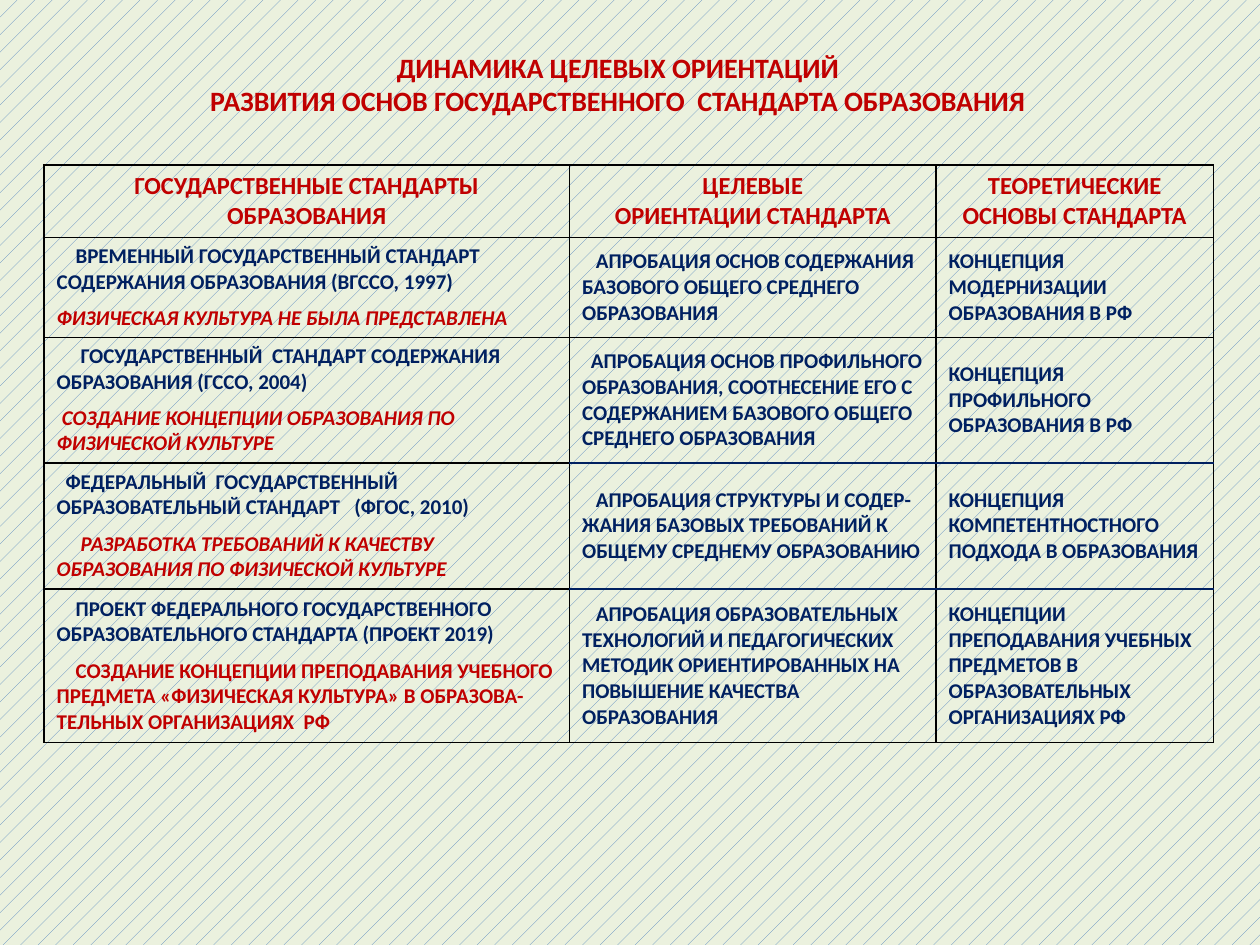
from dataclasses import dataclass
from typing import NamedTuple

from lxml.etree import SubElement
from pptx import Presentation
from pptx.dml.color import RGBColor
from pptx.enum.dml import MSO_PATTERN
from pptx.enum.text import MSO_ANCHOR as Anchor, MSO_AUTO_SIZE as AutoSize, PP_ALIGN as Align
from pptx.oxml.ns import qn
from pptx.util import Inches, Pt


@dataclass(frozen=True)
class Theme:
    font: str = "Calibri"
    red: str = "C00000"
    navy: str = "002060"
    black: str = "000000"
    pattern: str = "4F81BD"
    paper: str = "EBF1DE"
    title_size: int = 16
    header_size: int = 14
    body_size: int = 12
    space_after: int = 6
    border: int = 1


class Line(NamedTuple):
    text: str
    indent: float = 0
    accent: bool = False
    italic: bool = False


class StandardRow(NamedTuple):
    height: float
    standard: Line
    result: Line
    orientation: Line
    basis: Line
    bottom_color: str


THEME = Theme()
COLUMN_WIDTHS = (4.17, 2.91, 2.2)
HEADER_HEIGHT = 0.57
TITLE = (
    "ДИНАМИКА ЦЕЛЕВЫХ ОРИЕНТАЦИЙ \n"
    "РАЗВИТИЯ ОСНОВ ГОСУДАРСТВЕННОГО  СТАНДАРТА ОБРАЗОВАНИЯ "
)
HEADERS = (
    ("ГОСУДАРСТВЕННЫЕ СТАНДАРТЫ ОБРАЗОВАНИЯ",),
    ("ЦЕЛЕВЫЕ", "ОРИЕНТАЦИИ СТАНДАРТА"),
    ("ТЕОРЕТИЧЕСКИЕ ОСНОВЫ СТАНДАРТА",),
)
ROWS = (
    StandardRow(
        0.79,
        Line("ВРЕМЕННЫЙ ГОСУДАРСТВЕННЫЙ СТАНДАРТ СОДЕРЖАНИЯ ОБРАЗОВАНИЯ (ВГССО, 1997)", 0.15),
        Line("ФИЗИЧЕСКАЯ КУЛЬТУРА НЕ БЫЛА ПРЕДСТАВЛЕНА", 0, True, True),
        Line("АПРОБАЦИЯ ОСНОВ СОДЕРЖАНИЯ БАЗОВОГО ОБЩЕГО СРЕДНЕГО ОБРАЗОВАНИЯ", 0.11),
        Line("КОНЦЕПЦИЯ МОДЕРНИЗАЦИИ ОБРАЗОВАНИЯ В РФ"),
        THEME.black,
    ),
    StandardRow(
        0.99,
        Line("ГОСУДАРСТВЕННЫЙ  СТАНДАРТ СОДЕРЖАНИЯ ОБРАЗОВАНИЯ (ГССО, 2004)", 0.19),
        Line("СОЗДАНИЕ КОНЦЕПЦИИ ОБРАЗОВАНИЯ ПО ФИЗИЧЕСКОЙ КУЛЬТУРЕ", 0.04, True, True),
        Line("АПРОБАЦИЯ ОСНОВ ПРОФИЛЬНОГО ОБРАЗОВАНИЯ, СООТНЕСЕНИЕ ЕГО С "
             "СОДЕРЖАНИЕМ БАЗОВОГО ОБЩЕГО СРЕДНЕГО ОБРАЗОВАНИЯ", 0.07),
        Line("КОНЦЕПЦИЯ ПРОФИЛЬНОГО ОБРАЗОВАНИЯ В РФ"),
        THEME.navy,
    ),
    StandardRow(
        1,
        Line("ФЕДЕРАЛЬНЫЙ  ГОСУДАРСТВЕННЫЙ ОБРАЗОВАТЕЛЬНЫЙ СТАНДАРТ   (ФГОС, 2010)", 0.07),
        Line("РАЗРАБОТКА ТРЕБОВАНИЙ К КАЧЕСТВУ ОБРАЗОВАНИЯ ПО ФИЗИЧЕСКОЙ КУЛЬТУРЕ",
             0.19, True, True),
        Line("АПРОБАЦИЯ СТРУКТУРЫ И СОДЕР-ЖАНИЯ БАЗОВЫХ ТРЕБОВАНИЙ К ОБЩЕМУ "
             "СРЕДНЕМУ ОБРАЗОВАНИЮ", 0.11),
        Line("КОНЦЕПЦИЯ КОМПЕТЕНТНОСТНОГО ПОДХОДА В ОБРАЗОВАНИЯ"),
        THEME.navy,
    ),
    StandardRow(
        1.22,
        Line("ПРОЕКТ ФЕДЕРАЛЬНОГО ГОСУДАРСТВЕННОГО ОБРАЗОВАТЕЛЬНОГО СТАНДАРТА "
             "(ПРОЕКТ 2019)", 0.15),
        Line("СОЗДАНИЕ КОНЦЕПЦИИ ПРЕПОДАВАНИЯ УЧЕБНОГО ПРЕДМЕТА «ФИЗИЧЕСКАЯ КУЛЬТУРА» "
             "В ОБРАЗОВА-ТЕЛЬНЫХ ОРГАНИЗАЦИЯХ  РФ", 0.15, True),
        Line("АПРОБАЦИЯ ОБРАЗОВАТЕЛЬНЫХ ТЕХНОЛОГИЙ И ПЕДАГОГИЧЕСКИХ МЕТОДИК "
             "ОРИЕНТИРОВАННЫХ НА ПОВЫШЕНИЕ КАЧЕСТВА ОБРАЗОВАНИЯ", 0.11),
        Line("КОНЦЕПЦИИ ПРЕПОДАВАНИЯ УЧЕБНЫХ ПРЕДМЕТОВ В ОБРАЗОВАТЕЛЬНЫХ ОРГАНИЗАЦИЯХ РФ"),
        THEME.black,
    ),
)


def write_text(paragraph, text: str, *, size: int, color: str, align=Align.LEFT,
               italic: bool = False, indent: float = 0, space_after: int = 0) -> None:
    paragraph.alignment = align
    paragraph.space_after = Pt(space_after)
    if indent:
        paragraph._p.get_or_add_pPr().set("indent", str(Inches(indent)))
    for index, part in enumerate(text.split("\n")):
        if index:
            paragraph.add_line_break()
        run = paragraph.add_run()
        run.text = part
        run.font.name = THEME.font
        run.font.size = Pt(size)
        run.font.bold = True
        run.font.italic = italic
        run.font.color.rgb = RGBColor.from_string(color)


def set_borders(cell, top: str, bottom: str) -> None:
    properties = cell._tc.get_or_add_tcPr()
    sides = {"a:lnL": THEME.black, "a:lnR": THEME.black, "a:lnT": top, "a:lnB": bottom}
    for side, color in sides.items():
        line = SubElement(properties, qn(side), w=str(Pt(THEME.border)))
        fill = SubElement(line, qn("a:solidFill"))
        SubElement(fill, qn("a:srgbClr"), val=color)


def fill_cell(cell, lines: tuple[Line, ...], top: str, bottom: str, *,
              size: int, align=Align.LEFT, space_after: int = 0) -> None:
    set_borders(cell, top, bottom)
    cell.fill.background()
    cell.vertical_anchor = Anchor.MIDDLE
    frame = cell.text_frame
    for index, line in enumerate(lines):
        paragraph = frame.add_paragraph() if index else frame.paragraphs[0]
        write_text(paragraph, line.text, size=size, align=align, italic=line.italic,
                   color=THEME.red if line.accent else THEME.navy,
                   indent=line.indent, space_after=space_after)


def add_title(slide) -> None:
    title = slide.shapes.title
    title.left, title.top = Inches(0.43), Inches(0.36)
    title.width, title.height = Inches(9), Inches(0.61)
    frame = title.text_frame
    frame.auto_size = AutoSize.NONE
    frame.word_wrap = True
    frame.vertical_anchor = Anchor.MIDDLE
    write_text(frame.paragraphs[0], TITLE, size=THEME.title_size,
               color=THEME.red, align=Align.CENTER)


def add_standards_table(slide) -> None:
    heights = [HEADER_HEIGHT, *(row.height for row in ROWS)]
    table = slide.shapes.add_table(
        len(heights), len(COLUMN_WIDTHS), Inches(0.35), Inches(1.31),
        Inches(sum(COLUMN_WIDTHS)), Inches(sum(heights))).table
    table.first_row = table.horz_banding = False
    for column, width in zip(table.columns, COLUMN_WIDTHS):
        column.width = Inches(width)
    for table_row, height in zip(table.rows, heights):
        table_row.height = Inches(height)
    for column, texts in enumerate(HEADERS):
        lines = tuple(Line(text, accent=True) for text in texts)
        fill_cell(table.cell(0, column), lines, THEME.black, THEME.black,
                  size=THEME.header_size, align=Align.CENTER)
    top_color = THEME.black
    for row_number, row in enumerate(ROWS, 1):
        contents = ((row.standard, row.result), (row.orientation,), (row.basis,))
        for column, lines in enumerate(contents):
            edges = (top_color, row.bottom_color) if column else (THEME.black, THEME.black)
            fill_cell(table.cell(row_number, column), lines, *edges,
                      size=THEME.body_size, space_after=THEME.space_after)
        top_color = row.bottom_color


def main() -> None:
    presentation = Presentation()
    presentation.slide_width, presentation.slide_height = Inches(10), Inches(7.5)
    slide = presentation.slides.add_slide(presentation.slide_layouts[5])
    background = slide.background.fill
    background.patterned()
    background.pattern = MSO_PATTERN.PERCENT_5
    background.fore_color.rgb = RGBColor.from_string(THEME.pattern)
    background.back_color.rgb = RGBColor.from_string(THEME.paper)
    add_title(slide)
    add_standards_table(slide)
    presentation.save("out.pptx")


if __name__ == "__main__":
    main()
